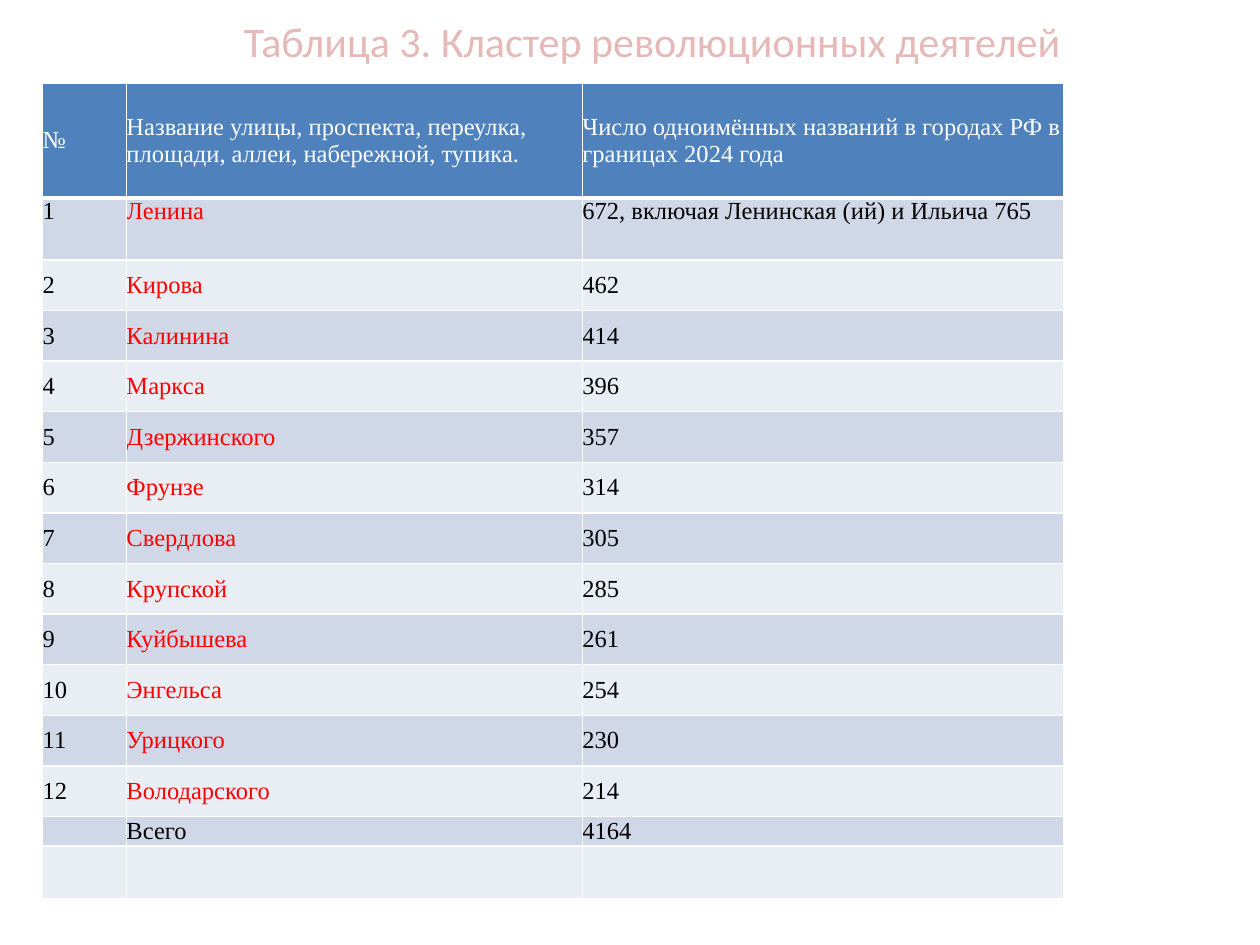
from lxml.etree import SubElement as Sub
from pptx import Presentation
from pptx.dml.color import RGBColor
from pptx.enum.text import MSO_ANCHOR as Anchor, PP_ALIGN as Align
from pptx.oxml.ns import qn
from pptx.util import Cm, Pt

WHITE, BLACK, RED = "FFFFFF", "000000", "FF0000"
BLUE, DARK, LIGHT, PINK = "4F81BD", "D0D8E8", "E9EDF4", "E6B9B8"

HEAD = (
    "№",
    "Название улицы, проспекта, переулка, площади, аллеи, набережной, тупика.",
    "Число одноимённых названий в городах РФ в границах 2024 года",
)
STREETS = [
    ("Ленина", "672, включая Ленинская (ий) и Ильича 765"),
    ("Кирова", "462"),
    ("Калинина", "414"),
    ("Маркса", "396"),
    ("Дзержинского", "357"),
    ("Фрунзе", "314"),
    ("Свердлова", "305"),
    ("Крупской", "285"),
    ("Куйбышева", "261"),
    ("Энгельса", "254"),
    ("Урицкого", "230"),
    ("Володарского", "214"),
]
TOTAL = ("", "Всего", "4164")
COLS = (1.69, 9.19, 9.71)
ROWS = [2.31, 1.25] + [1.02] * (len(STREETS) - 1) + [0.58, 1.06]


def color(code):
    return RGBColor.from_string(code)


class Page:
    """Holds the table style and the current slide."""

    face, size = "Times New Roman", 14

    def __init__(self, slide):
        self.slide = slide

    def font(self, para, face, size, code):
        para.font.name = face
        para.font.size = Pt(size)
        para.font.color.rgb = color(code)

    def title(self, text, x, y, w, h):
        frame = self.slide.shapes.add_textbox(Cm(x), Cm(y), Cm(w), Cm(h)).text_frame
        frame.word_wrap = True
        frame.vertical_anchor = Anchor.MIDDLE
        para = frame.paragraphs[0]
        para.text = text
        para.alignment = Align.CENTER
        self.font(para, "Calibri", 24, PINK)

    def edge(self, cell, side, width):
        """Draw a white border on one side: L, R, T or B."""
        line = Sub(cell._tc.get_or_add_tcPr(), qn(f"a:ln{side}"), w=str(Pt(width)))
        Sub(Sub(line, qn("a:solidFill")), qn("a:srgbClr"), val=WHITE)

    def cell(self, cell, text, ink, fill, anchor, base):
        cell.margin_left = cell.margin_right = 0
        cell.margin_top = cell.margin_bottom = 0
        cell.vertical_anchor = anchor
        for side, width in zip("LRTB", (1, 1, 1, base)):
            self.edge(cell, side, width)
        cell.fill.solid()
        cell.fill.fore_color.rgb = color(fill)
        para = cell.text_frame.paragraphs[0]
        para.text = text
        self.font(para, self.face, self.size, ink)

    def table(self, data, x, y, cols, rows):
        grid = self.slide.shapes.add_table(
            len(rows), len(cols), Cm(x), Cm(y), Cm(sum(cols)), Cm(sum(rows))
        ).table
        for col, width in zip(grid.columns, cols):
            col.width = Cm(width)
        for i, (row, high) in enumerate(zip(grid.rows, rows)):
            row.height = Cm(high)
            fill = BLUE if i == 0 else DARK if i % 2 else LIGHT
            anchor = Anchor.TOP if i == 1 else Anchor.MIDDLE
            for j, cell in enumerate(row.cells):
                named = j == 1 and 1 <= i <= len(STREETS)
                ink = WHITE if i == 0 else RED if named else BLACK
                self.cell(cell, data[i][j], ink, fill, anchor, 1 if i else 3)


def main():
    deck = Presentation()
    deck.slide_width, deck.slide_height = Cm(25.4), Cm(19.05)
    page = Page(deck.slides.add_slide(deck.slide_layouts[6]))
    page.title("Таблица 3. Кластер революционных деятелей ", 2.36, 0.25, 21.77, 1.14)
    body = [(str(n), *street) for n, street in enumerate(STREETS, 1)]
    page.table([HEAD, *body, TOTAL, ("", "", "")], 0.86, 1.68, COLS, ROWS)
    deck.save("out.pptx")


if __name__ == "__main__":
    main()
